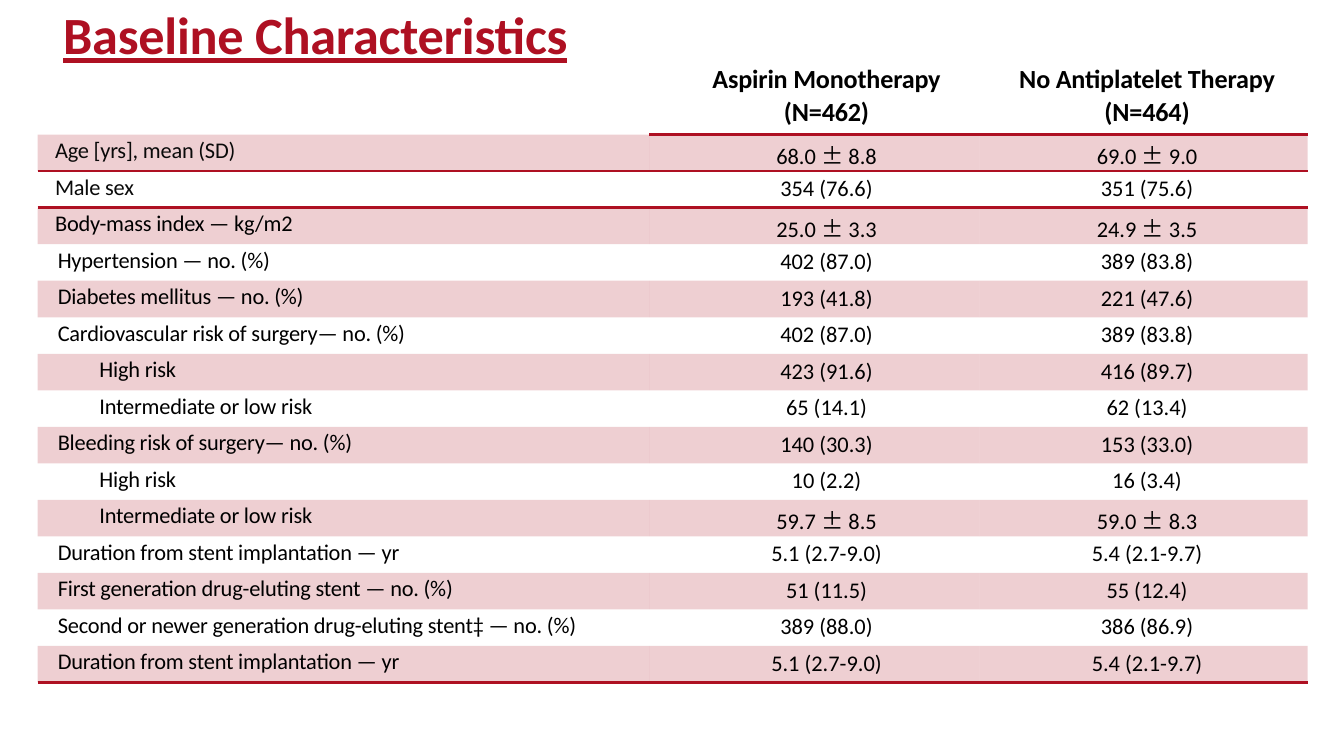
from dataclasses import dataclass

from lxml.etree import SubElement
from pptx import Presentation
from pptx.dml.color import RGBColor
from pptx.enum.text import PP_ALIGN
from pptx.oxml import parse_xml
from pptx.oxml.ns import nsdecls, qn
from pptx.slide import Slide
from pptx.table import Table, _Cell
from pptx.text.text import Font
from pptx.util import Inches, Pt

CRIMSON = RGBColor(0xAE, 0x10, 0x22)
BLACK = RGBColor(0x00, 0x00, 0x00)
NEAR_BLACK = RGBColor(0x0A, 0x0A, 0x0A)

FONT = "Calibri"
SYMBOL_FONT = "Noto Sans CJK KR"
PLAIN_TABLE_STYLE = "{2D5ABB26-0587-4C30-8999-92F81FD0307C}"

SLIDE_WIDTH = Inches(10)
SLIDE_HEIGHT = SLIDE_WIDTH * 9 // 16
TABLE_LEFT, TABLE_TOP = 0.28, 0.49
TABLE_HEIGHT, FIRST_ROW_HEIGHT = 4.59, 0.24
COLUMN_WIDTHS = (4.55, 2.46, 2.44)
VALUE_INDENTS = (0.18, 0.05)
OUTER, INNER, NESTED = 0.13, 0.15, 0.46
HEADER_ROWS = 2


@dataclass(frozen=True)
class Characteristic:
    label: str
    aspirin: str
    no_therapy: str
    indent: float = INNER
    color: RGBColor = BLACK


HEADERS = (
    ("Aspirin Monotherapy", "(N=462)"),
    ("No Antiplatelet Therapy", "(N=464)"),
)

CHARACTERISTICS = (
    Characteristic("Age [yrs], mean (SD)", "68.0 ± 8.8", "69.0 ± 9.0", OUTER, NEAR_BLACK),
    Characteristic("Male sex", "354 (76.6)", "351 (75.6)", OUTER, NEAR_BLACK),
    Characteristic("Body-mass index — kg/m2", "25.0 ± 3.3", "24.9 ± 3.5", OUTER),
    Characteristic("Hypertension — no. (%)", "402 (87.0)", "389 (83.8)"),
    Characteristic("Diabetes mellitus — no. (%)", "193 (41.8)", "221 (47.6)"),
    Characteristic("Cardiovascular risk of surgery— no. (%)", "402 (87.0)", "389 (83.8)"),
    Characteristic("High risk", "423 (91.6)", "416 (89.7)", NESTED),
    Characteristic("Intermediate or low risk", "65 (14.1)", "62 (13.4)", NESTED),
    Characteristic("Bleeding risk of surgery— no. (%)", "140 (30.3)", "153 (33.0)"),
    Characteristic("High risk", "10 (2.2)", "16 (3.4)", NESTED),
    Characteristic("Intermediate or low risk", "59.7 ± 8.5", "59.0 ± 8.3", NESTED),
    Characteristic("Duration from stent implantation — yr", "5.1 (2.7-9.0)", "5.4 (2.1-9.7)"),
    Characteristic("First generation drug-eluting stent — no. (%)", "51 (11.5)", "55 (12.4)"),
    Characteristic(
        "Second or newer generation drug-eluting stent‡ — no. (%)", "389 (88.0)", "386 (86.9)"
    ),
    Characteristic("Duration from stent implantation — yr", "5.1 (2.7-9.0)", "5.4 (2.1-9.7)"),
)


def style_font(font: Font, size: float, color: RGBColor, bold: bool, tight: bool) -> None:
    font.name, font.size, font.bold = FONT, Pt(size), bold
    font.color.rgb = color
    if tight:
        font._element.set("spc", "-10")


def add_title(slide: Slide) -> None:
    shape = slide.shapes.add_textbox(Inches(0.26), Inches(0), Inches(9.48), Inches(0.49))
    frame = shape.text_frame
    frame.word_wrap = True
    frame.margin_left, frame.margin_top = Inches(0.02), Inches(0.02)
    frame.margin_right = frame.margin_bottom = 0
    paragraph = frame.paragraphs[0]
    paragraph.text = "\tBaseline Characteristics"
    tab_stops = SubElement(paragraph._p.get_or_add_pPr(), qn("a:tabLst"))
    SubElement(tab_stops, qn("a:tab"), pos=str(Inches(0.19)), algn="l")
    style_font(paragraph.font, 28, CRIMSON, bold=True, tight=True)
    paragraph.font.underline = True


def write_cell(
    cell: _Cell, text: str, indent: float, top: float, size: float,
    color: RGBColor = BLACK, bold: bool = False, centred: bool = True, tight: bool = False,
) -> None:
    cell.margin_left, cell.margin_top = Inches(indent), Inches(top)
    paragraph = cell.text_frame.paragraphs[0]
    paragraph.alignment = PP_ALIGN.CENTER if centred else PP_ALIGN.LEFT
    if bold:
        paragraph.line_spacing = Pt(16.1)
    before, symbol, after = text.partition("± ")
    for part in filter(None, (before, symbol, after)):
        run = paragraph.add_run()
        run.text = part
        if part == symbol:
            run.font.name = SYMBOL_FONT
    style_font(paragraph.font, size, color, bold, tight)


def tint_cell(cell: _Cell) -> None:
    cell.fill.solid()
    cell.fill.fore_color.rgb = CRIMSON
    for color in cell._tc.tcPr.iter(qn("a:srgbClr")):
        SubElement(color, qn("a:alpha"), val="20000")


def add_border(cell: _Cell, side: str) -> None:
    cell._tc.get_or_add_tcPr().insert(0, parse_xml(
        f'<a:{side} {nsdecls("a")} w="{Pt(1.5)}"><a:solidFill>'
        f'<a:srgbClr val="{CRIMSON}"/></a:solidFill></a:{side}>'
    ))


def add_characteristics_table(slide: Slide) -> Table:
    row_count = HEADER_ROWS + len(CHARACTERISTICS)
    table = slide.shapes.add_table(
        row_count, len(COLUMN_WIDTHS), Inches(TABLE_LEFT), Inches(TABLE_TOP),
        Inches(sum(COLUMN_WIDTHS)), Inches(TABLE_HEIGHT),
    ).table
    table.first_row = table.horz_banding = False
    table._tbl.tblPr.find(qn("a:tableStyleId")).text = PLAIN_TABLE_STYLE
    for column, width in zip(table.columns, COLUMN_WIDTHS):
        column.width = Inches(width)
    for row in table.rows:
        row.height = Inches((TABLE_HEIGHT - FIRST_ROW_HEIGHT) / (row_count - 1))
    table.rows[0].height = Inches(FIRST_ROW_HEIGHT)
    for cell in table.iter_cells():
        cell.margin_left = cell.margin_right = cell.margin_top = cell.margin_bottom = 0
        cell.fill.background()
    return table


def fill_table(table: Table) -> None:
    for row in range(HEADER_ROWS):
        paragraph = table.cell(row, 0).text_frame.paragraphs[0]
        SubElement(paragraph._p, qn("a:endParaRPr"), sz="1200")
    table.cell(0, 0).merge(table.cell(1, 0))
    for column, (lines, indent) in enumerate(zip(HEADERS, VALUE_INDENTS), 1):
        for row, line in enumerate(lines):
            write_cell(table.cell(row, column), line, indent, 0, 14, bold=True, tight=True)

    for row, item in enumerate(CHARACTERISTICS, HEADER_ROWS):
        write_cell(
            table.cell(row, 0), item.label, item.indent, 0.02, 12, item.color,
            centred=False, tight=True,
        )
        for column, value in enumerate((item.aspirin, item.no_therapy), 1):
            write_cell(table.cell(row, column), value, VALUE_INDENTS[column - 1], 0.03, 12)
        if row % 2 == 0:
            for column in range(len(COLUMN_WIDTHS)):
                tint_cell(table.cell(row, column))

    last_row = len(table.rows) - 1
    for column in range(len(COLUMN_WIDTHS)):
        for row in (HEADER_ROWS - 1, HEADER_ROWS, last_row):
            add_border(table.cell(row, column), "lnB")
        add_border(table.cell(HEADER_ROWS + 1, column), "lnT")


def main() -> None:
    presentation = Presentation()
    presentation.slide_width, presentation.slide_height = SLIDE_WIDTH, SLIDE_HEIGHT
    slide = presentation.slides.add_slide(presentation.slide_layouts[6])
    fill_table(add_characteristics_table(slide))
    add_title(slide)
    presentation.save("out.pptx")


if __name__ == "__main__":
    main()
